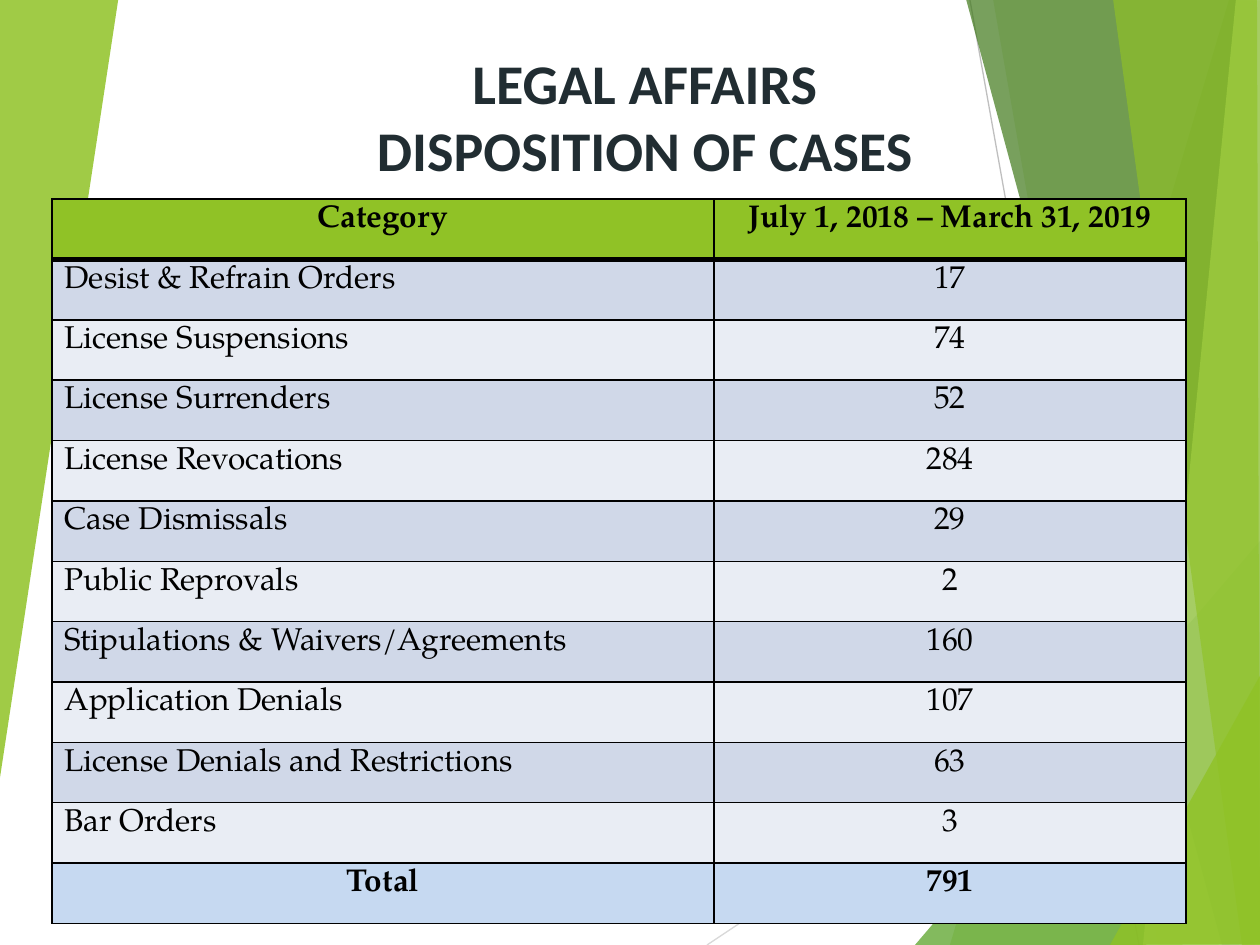
"""Build the slide on the disposition of legal affairs cases."""
import lxml.etree
import pptx
import pptx.dml.color
import pptx.enum.shapes
import pptx.enum.text
import pptx.oxml.ns
import pptx.util

RGBColor = pptx.dml.color.RGBColor
PP_ALIGN = pptx.enum.text.PP_ALIGN
qn = pptx.oxml.ns.qn

SCALE = 914400 / 126
SLATE = RGBColor(0x21, 0x2D, 0x32)
BLACK = RGBColor(0x00, 0x00, 0x00)
LIME = RGBColor(0x90, 0xC2, 0x26)
LEAF = RGBColor(0x54, 0xA0, 0x21)
FOREST = RGBColor(0x3F, 0x78, 0x19)
PALE_LIME = RGBColor(0xC0, 0xE4, 0x74)
LIGHT_GRAY = RGBColor(0xD9, 0xD9, 0xD9)
GRAY = RGBColor(0xBF, 0xBF, 0xBF)
BAND_DARK = RGBColor(0xD0, 0xD8, 0xE8)
BAND_LIGHT = RGBColor(0xE9, 0xED, 0xF4)
TOTAL_BLUE = RGBColor(0xC6, 0xD9, 0xF1)

TITLE_FORMAT = {"name": "Calibri", "size": pptx.util.Pt(32), "bold": True}
CELL_FORMAT = {"name": "TeX Gyre Pagella", "size": pptx.util.Pt(18)}


def px(length):
    return pptx.util.Emu(round(length * SCALE))


def format_font(font, values, color):
    for name, value in values.items():
        setattr(font, name, value)
    font.color.rgb = color


presentation = pptx.Presentation()
presentation.slide_width = px(1260)
presentation.slide_height = px(945)
slide = presentation.slides.add_slide(presentation.slide_layouts[5])

rays = [
    ((707, 945), (1261, 576), LIGHT_GRAY),
    ((970, 0), (1139, 945), GRAY),
]
for start, end, color in rays:
    connector = slide.shapes.add_connector(
        pptx.enum.shapes.MSO_CONNECTOR.STRAIGHT, *map(px, start + end))
    connector.line.color.rgb = color
    connector.line.width = pptx.util.Pt(0.75)
    lxml.etree.SubElement(connector._element.spPr, qn("a:effectLst"))

facets = [
    ([(1229, 0), (950, 945), (1262, 946), (1261, 1)], LIME, 30),
    ([(993, -1), (1158, 945), (1261, 945), (1261, -1)], LIME, 20),
    ([(915, 945), (1260, 541), (1261, 945)], LEAF, 72),
    ([(966, -1), (1222, 945), (1261, 944), (1261, -1)], FOREST, 70),
    ([(1236, -1), (1143, 945), (1261, 945), (1260, -1)], PALE_LIME, 70),
    ([(1113, -1), (1242, 945), (1260, 945), (1257, -1)], LIME, 65),
    ([(1110, 945), (1261, 674), (1261, 944)], LIME, 80),
    ([(-1, 0), (118, -1), (118, 1), (-1, 784)], LIME, 85),
]
for points, color, opacity in facets:
    builder = slide.shapes.build_freeform(*points[0], scale=SCALE)
    builder.add_line_segments(points[1:], close=True)
    shape = builder.convert_to_shape()
    shape.shadow.inherit = False
    shape.line.fill.background()
    shape.fill.solid()
    shape.fill.fore_color.rgb = color
    color_element = shape._element.spPr.find(qn("a:solidFill"))[0]
    lxml.etree.SubElement(color_element, qn("a:alpha"), val=str(opacity * 1000))

title = slide.shapes.title
slide.shapes._spTree.append(title._element)
title_box = {"left": 94, "top": 42, "width": 1102, "height": 147}
for name, length in title_box.items():
    setattr(title, name, px(length))
title.text_frame.auto_size = pptx.enum.text.MSO_AUTO_SIZE.NONE
title.text_frame.vertical_anchor = pptx.enum.text.MSO_ANCHOR.TOP
title.text_frame.text = "LEGAL AFFAIRS\nDISPOSITION OF CASES"
for paragraph in title.text_frame.paragraphs:
    paragraph.alignment = PP_ALIGN.CENTER
    format_font(paragraph.runs[0].font, TITLE_FORMAT, SLATE)

rows = [
    ("Category", "July 1, 2018 – March 31, 2019"),
    ("Desist & Refrain Orders", "17"),
    ("License Suspensions", "74"),
    ("License Surrenders", "52"),
    ("License Revocations", "284"),
    ("Case Dismissals", "29"),
    ("Public Reprovals", "2"),
    ("Stipulations & Waivers/Agreements", "160"),
    ("Application Denials", "107"),
    ("License Denials and Restrictions", "63"),
    ("Bar Orders", "3"),
    ("Total", "791"),
]
last = len(rows) - 1
table = slide.shapes.add_table(
    len(rows), 2, px(52), px(199), px(1134), px(725)).table
for column, width in zip(table.columns, (662, 472)):
    column.width = px(width)

for row_index, row in enumerate(rows):
    emphasized = row_index in (0, last)
    band = BAND_DARK if row_index % 2 else BAND_LIGHT
    fill_color = {0: LIME, last: TOTAL_BLUE}.get(row_index, band)
    border_widths = {
        "a:lnL": 1,
        "a:lnR": 1,
        "a:lnT": 3 if row_index == 1 else 1,
        "a:lnB": 3 if row_index == 0 else 1,
    }
    for column_index, text in enumerate(row):
        cell = table.cell(row_index, column_index)
        cell.text = text
        cell.margin_top = cell.margin_bottom = px(6)
        paragraph = cell.text_frame.paragraphs[0]
        centered = emphasized or column_index == 1
        paragraph.alignment = PP_ALIGN.CENTER if centered else PP_ALIGN.LEFT
        format_font(paragraph.runs[0].font, {**CELL_FORMAT, "bold": emphasized}, BLACK)
        properties = cell._tc.get_or_add_tcPr()
        for tag, width in border_widths.items():
            border = lxml.etree.SubElement(
                properties, qn(tag), w=str(pptx.util.Pt(width)))
            border_fill = lxml.etree.SubElement(border, qn("a:solidFill"))
            lxml.etree.SubElement(border_fill, qn("a:srgbClr"), val=str(BLACK))
        cell.fill.solid()
        cell.fill.fore_color.rgb = fill_color

presentation.save("out.pptx")
